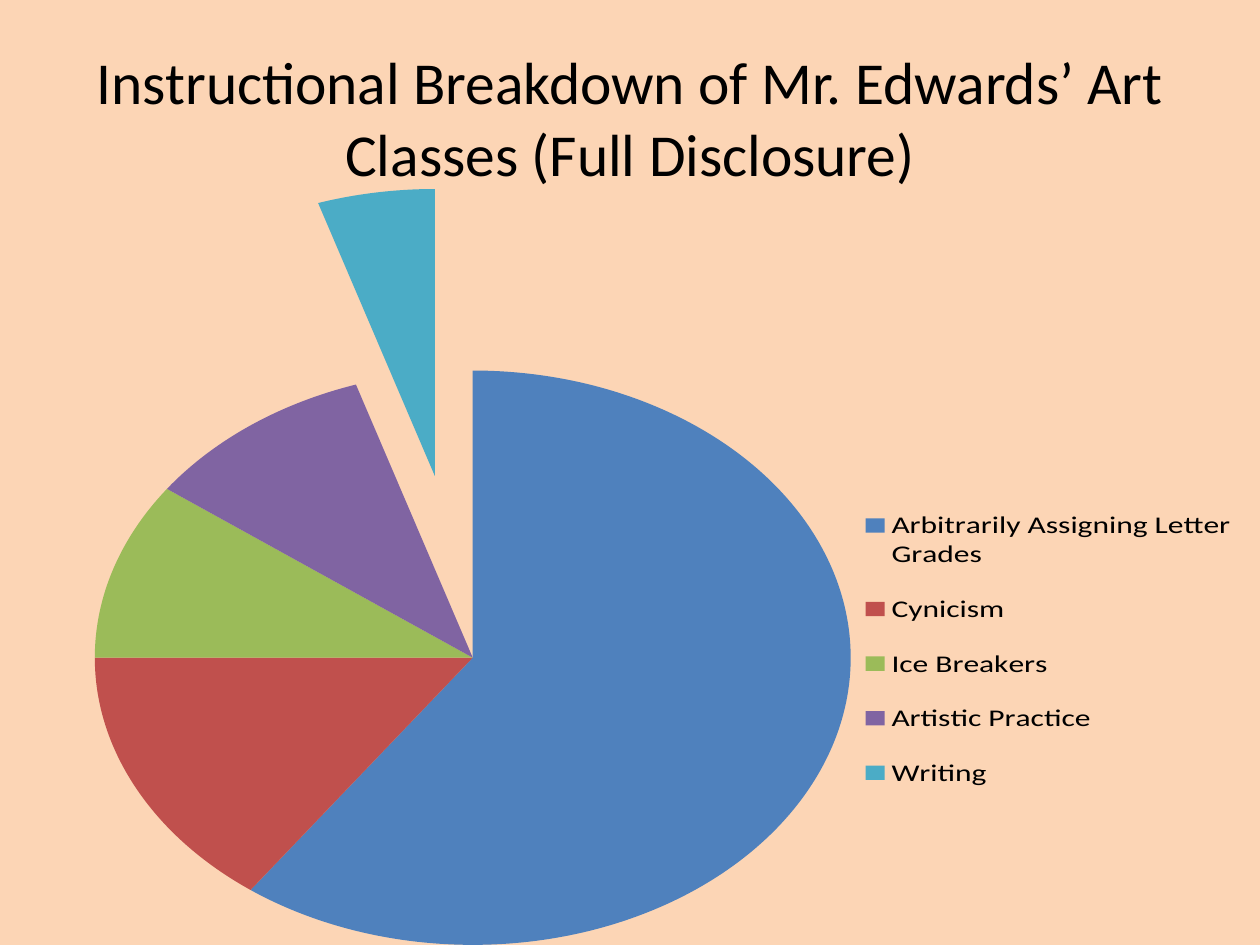
from lxml import etree
from pptx import Presentation
from pptx import util as u
from pptx.chart import data
from pptx.dml import color
from pptx.enum import chart as charts, text
from pptx.oxml import ns

COLORS = {
    "background": "FCD5B5",
    "text": "000000",
    "Arbitrarily Assigning Letter Grades": "4F81BD",
    "Cynicism": "C0504D",
    "Ice Breakers": "9BBB59",
    "Artistic Practice": "8064A2",
    "Writing": "4BACC6",
}
SHARES = {
    "Arbitrarily Assigning Letter Grades": 60,
    "Cynicism": 15,
    "Ice Breakers": 10,
    "Artistic Practice": 10,
    "Writing": 5,
}
TITLE = "Instructional Breakdown of Mr. Edwards’ Art Classes (Full Disclosure)"
TITLE_BOX = (0, 0.76, 25.4, 3.18)
CHART_BOX = (-1.27, 3.81, 26.67, 15.24)
EDGE_MODES = {"xMode": "edge", "yMode": "edge"}
PLOT_LAYOUT = {"layoutTarget": "inner", **EDGE_MODES, "x": 0, "y": 0, "w": 0.81, "h": 1}
LEGEND_LAYOUT = {**EDGE_MODES, "x": 0.69, "y": 0.2, "w": 0.3, "h": 0.57}
EXPLOSION = 64


def rgb(name):
    return color.RGBColor.from_string(COLORS[name])


def apply_format(target, values):
    for name, value in values.items():
        setattr(target, name, value)


def format_font(font, size):
    apply_format(font, {"name": "Calibri", "size": u.Pt(size), "bold": False})
    font.color.rgb = rgb("text")


def add_chart_element(parent, tag, value=None):
    element = etree.SubElement(parent, ns.qn(f"c:{tag}"))
    if value is not None:
        element.set("val", str(value))
    return element


def place_title(slide, box):
    title = slide.shapes.title
    apply_format(title, dict(zip(("left", "top", "width", "height"), map(u.Cm, box))))
    apply_format(title.text_frame, {
        "text": TITLE,
        "word_wrap": True,
        "auto_size": text.MSO_AUTO_SIZE.NONE,
        "vertical_anchor": text.MSO_ANCHOR.MIDDLE,
    })
    paragraph = title.text_frame.paragraphs[0]
    paragraph.alignment = text.PP_ALIGN.CENTER
    format_font(paragraph.runs[0].font, 34)


def set_layout(parent, position, values):
    for old_layout in parent.findall(ns.qn("c:layout")):
        parent.remove(old_layout)
    layout = add_chart_element(parent, "layout")
    parent.insert(position, layout)
    manual = add_chart_element(layout, "manualLayout")
    for tag, value in values.items():
        add_chart_element(manual, tag, value)


def explode_slice(point):
    fill = point.format.fill._xPr
    explosion = add_chart_element(fill.getparent(), "explosion", EXPLOSION)
    fill.addprevious(explosion)


def place_pie(slide, box):
    chart_data = data.CategoryChartData()
    chart_data.categories = list(SHARES)
    chart_data.add_series("Series 1", list(SHARES.values()))
    chart = slide.shapes.add_chart(
        charts.XL_CHART_TYPE.PIE, *map(u.Cm, box), chart_data
    ).chart
    apply_format(chart, {"has_title": False, "has_legend": True})
    apply_format(chart.legend, {
        "position": charts.XL_LEGEND_POSITION.RIGHT,
        "include_in_layout": False,
    })
    format_font(chart.font, 18)
    plot = chart.plots[0]
    plot.vary_by_categories = True
    points = plot.series[0].points
    for index, category in enumerate(SHARES):
        fill = points[index].format.fill
        fill.solid()
        fill.fore_color.rgb = rgb(category)
    explode_slice(points[len(SHARES) - 1])
    set_layout(plot._element.getparent(), 0, PLOT_LAYOUT)
    legend = chart.legend._element
    has_position = legend.find(ns.qn("c:legendPos")) is not None
    set_layout(legend, int(has_position), LEGEND_LAYOUT)


def main():
    presentation = Presentation()
    apply_format(presentation, {"slide_width": u.Cm(25.4), "slide_height": u.Cm(19.05)})
    slide = presentation.slides.add_slide(presentation.slide_layouts[5])
    slide.background.fill.solid()
    slide.background.fill.fore_color.rgb = rgb("background")
    place_title(slide, TITLE_BOX)
    place_pie(slide, CHART_BOX)
    presentation.save("out.pptx")


if __name__ == "__main__":
    main()
